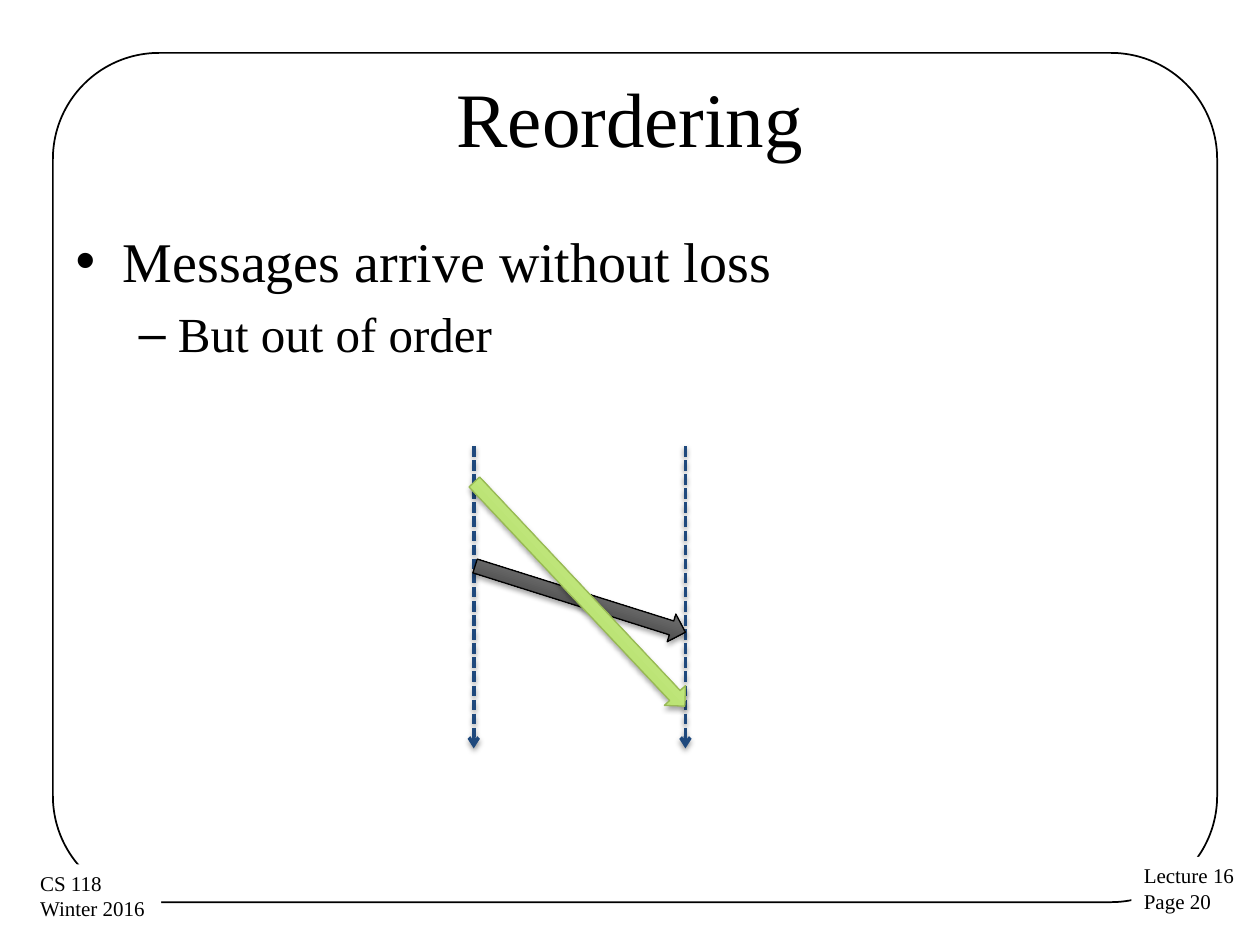
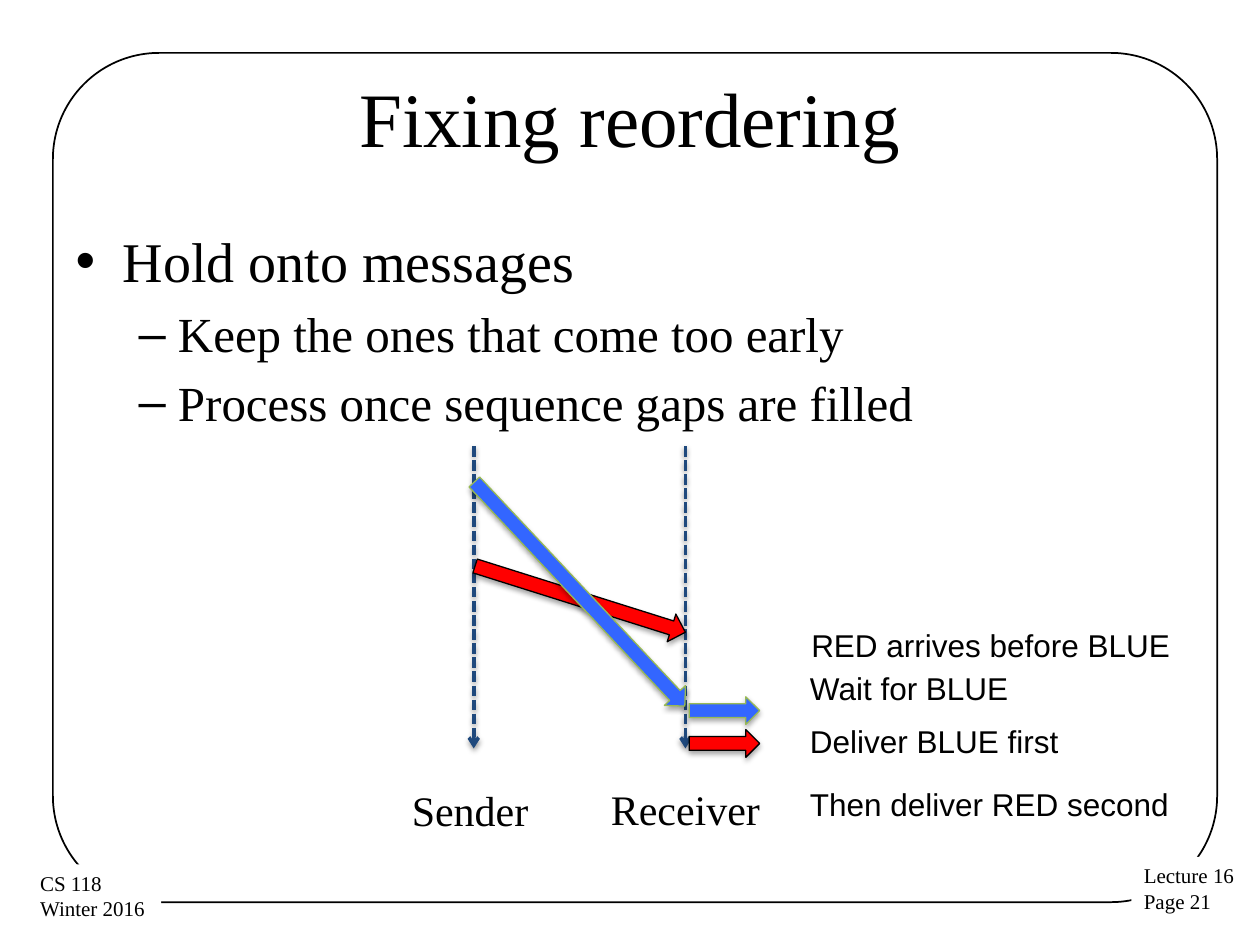
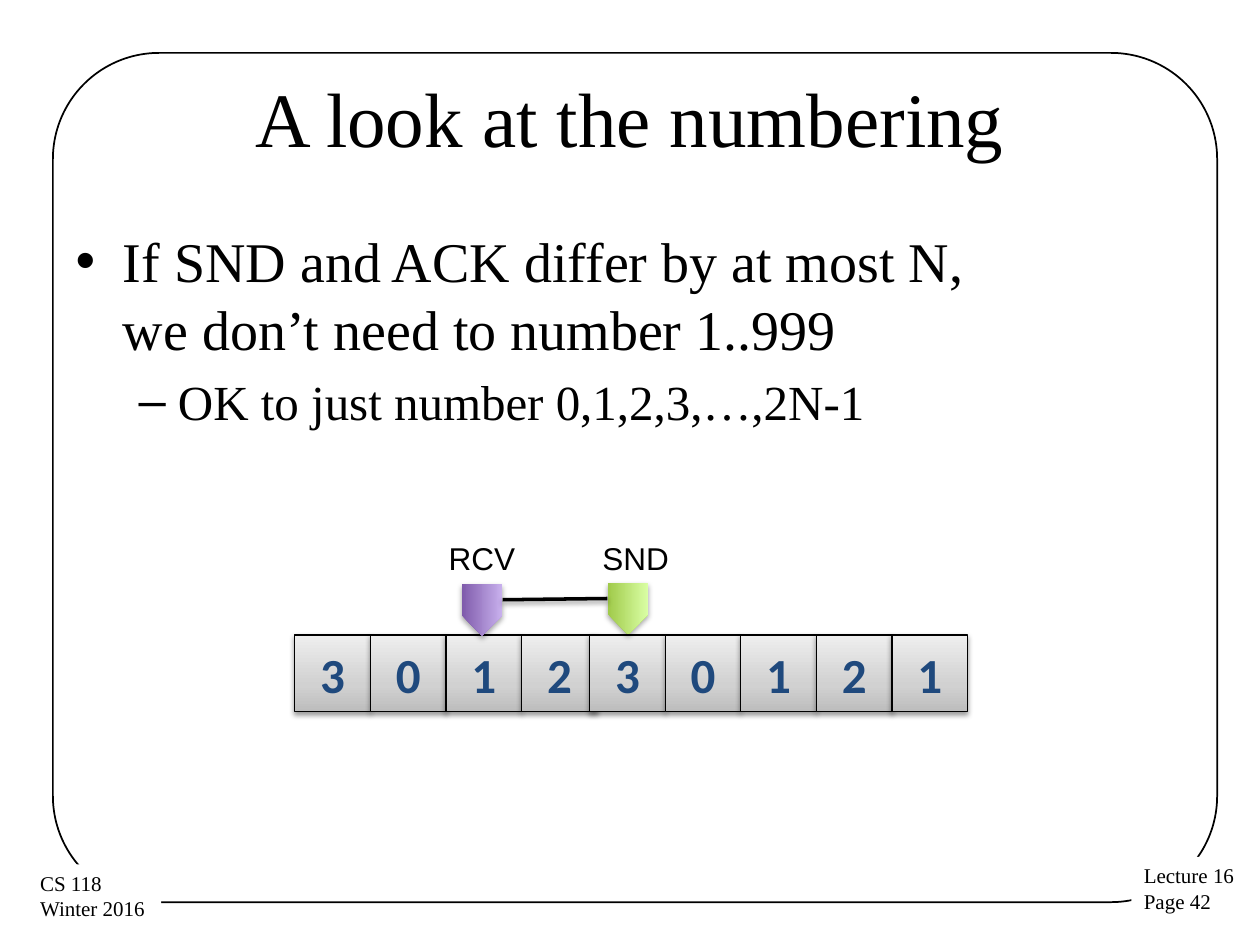
from lxml import etree
from pptx import Presentation
from pptx.dml.color import RGBColor
from pptx.enum.dml import MSO_LINE
from pptx.enum.shapes import MSO_CONNECTOR, MSO_SHAPE
from pptx.enum.text import MSO_ANCHOR, MSO_AUTO_SIZE, PP_ALIGN
from pptx.oxml import parse_xml
from pptx.oxml.ns import nsdecls, qn
from pptx.util import Inches, Pt

FRAME = MSO_SHAPE.ROUNDED_RECTANGLE
CELL = MSO_SHAPE.RECTANGLE
ARROW = MSO_SHAPE.RIGHT_ARROW
MARKER = MSO_SHAPE.PENTAGON
STRAIGHT = MSO_CONNECTOR.STRAIGHT
SYS_DASH = MSO_LINE.SQUARE_DOT
CENTER, LEFT = PP_ALIGN.CENTER, PP_ALIGN.LEFT
MIDDLE = MSO_ANCHOR.MIDDLE
FIT_SHAPE, NO_FIT = MSO_AUTO_SIZE.SHAPE_TO_FIT_TEXT, MSO_AUTO_SIZE.NONE

SERIF, SANS, CELL_FONT = "Times New Roman", "Arial", "Calibri"
BLACK, WHITE, NAVY = "000000", "FFFFFF", "1F497D"
RED, BLUE, GREEN_EDGE = "FF0000", "3366FF", "98B955"
DARK_BLEND = [(0, BLACK), (100, "BDBDBD")]
GREEN_BLEND = [(0, "A0CA4A"), (100, "DAFFA5")]
PURPLE_BLEND = [(0, "7F5BAB"), (100, "C8B0ED")]
GRAY_BLEND = [(0, "BDBDBD"), (35, "D1D1D1"), (100, "EEEEEE")]
LIST_SIZES = (32, 28)
STRONG_SHADOW, SOFT_SHADOW = (38, 1.6), (35, 1.8)
SENDER_X, RECEIVER_X = 3.76, 5.44


def rgb(color):
    """Turn a hex string into a colour."""
    return RGBColor.from_string(color)


def box(left, top, width, height):
    """Convert a place in inches to lengths."""
    return [Inches(value) for value in (left, top, width, height)]


class LectureDeck:
    """Hold the lecture style and the current slide."""

    def __init__(self):
        """Start an empty deck."""
        self.deck = Presentation()
        self.deck.slide_width, self.deck.slide_height = Inches(10), Inches(7.5)
        self.slide = None

    def start(self, title, points, page):
        """Add a slide with frame, footers, title and list."""
        self.slide = self.deck.slides.add_slide(self.deck.slide_layouts[1])
        self.shape(FRAME, (0.42, 0.42, 9.24, 6.74), edge=BLACK, weight=1).adjustments[0] = 0.125
        self.label((8.98, 6.8, 0.93, 0.51), ["Lecture 16", f"Page {page}"], 12, SERIF, fill=WHITE)
        self.label((0.22, 6.86, 1.06, 0.51), ["CS 118", "Winter 2016"], 12, SERIF, fill=WHITE)
        heading = self.slide.shapes.title
        self.place(heading, (0.5, 0.3, 9, 1.25))
        heading.text_frame.vertical_anchor = MIDDLE
        self.add_text(heading.text_frame.paragraphs[0], title, 44, SERIF, align=CENTER)
        body = self.slide.placeholders[1]
        self.place(body, (0.5, 1.75, 9, 4.95))
        body.text_frame.auto_size = NO_FIT
        for index, (level, text) in enumerate(points):
            paragraph = self.paragraph(body.text_frame, index)
            paragraph.level = level
            self.add_text(paragraph, text, LIST_SIZES[level], SERIF)

    def place(self, holder, place):
        """Move a placeholder."""
        holder.left, holder.top, holder.width, holder.height = box(*place)

    def paragraph(self, frame, index):
        """Return the first paragraph or add the next one."""
        return frame.add_paragraph() if index else frame.paragraphs[0]

    def add_text(self, paragraph, text, size, font, color=BLACK, bold=False, align=LEFT):
        """Add formatted runs, one for each line of the text."""
        paragraph.alignment = align
        for index, line in enumerate(text.split("\n")):
            if index:
                paragraph.add_line_break()
            run = paragraph.add_run()
            run.text = line
            run.font.size, run.font.name, run.font.bold = Pt(size), font, bold
            run.font.color.rgb = rgb(color)

    def label(self, place, lines, size, font, align=LEFT, fill=None):
        """Add a text box that does not wrap."""
        text_box = self.slide.shapes.add_textbox(*box(*place))
        if fill:
            text_box.fill.solid()
            text_box.fill.fore_color.rgb = rgb(fill)
        frame = text_box.text_frame
        frame.word_wrap, frame.auto_size = False, FIT_SHAPE
        for index, line in enumerate(lines):
            self.add_text(self.paragraph(frame, index), line, size, font, align=align)

    def shadow(self, item, strength):
        """Give an element a downward shadow."""
        alpha, distance = strength
        effects = etree.SubElement(item.element.spPr, qn("a:effectLst"))
        effects.append(parse_xml(
            f'<a:outerShdw {nsdecls("a")} blurRad="{Pt(3.1)}" dist="{Pt(distance)}" '
            f'dir="5400000" rotWithShape="0"><a:srgbClr val="{BLACK}">'
            f'<a:alpha val="{alpha * 1000}"/></a:srgbClr></a:outerShdw>'))

    def blend(self, shape, stops):
        """Fill a shape with a gradient that runs upwards."""
        properties = shape.element.spPr
        marks = "".join(f'<a:gs pos="{position * 1000}"><a:srgbClr val="{color}"/></a:gs>'
                        for position, color in stops)
        properties.replace(properties.find(qn("a:noFill")), parse_xml(
            f'<a:gradFill {nsdecls("a")} rotWithShape="1"><a:gsLst>{marks}</a:gsLst>'
            '<a:lin ang="16200000" scaled="0"/></a:gradFill>'))

    def shape(self, kind, place, fill=None, edge=None, weight=0.75, turn=0, shadow=None):
        """Add a preset shape with a plain or blended fill."""
        shape = self.slide.shapes.add_shape(kind, *box(*place))
        shape.rotation = turn
        if edge:
            shape.line.color.rgb = rgb(edge)
            shape.line.width = Pt(weight)
        else:
            shape.line.fill.background()
        if isinstance(fill, str):
            shape.fill.solid()
            shape.fill.fore_color.rgb = rgb(fill)
        else:
            shape.fill.background()
            if fill:
                self.blend(shape, fill)
        if shadow:
            self.shadow(shape, shadow)
        else:
            shape.shadow.inherit = False
        return shape

    def line(self, start, end, color, dashed_arrow=False):
        """Add a straight line, dashed with an arrowhead on request."""
        line = self.slide.shapes.add_connector(STRAIGHT, *box(*start, *end))
        line.line.color.rgb = rgb(color)
        line.line.width = Pt(2)
        if dashed_arrow:
            line.line.dash_style = SYS_DASH
            etree.SubElement(line.element.spPr.find(qn("a:ln")), qn("a:tailEnd"), type="arrow")
        self.shadow(line, STRONG_SHADOW)

    def message(self, place, fill, edge, turn=0):
        """Add a block arrow for a message."""
        self.shape(ARROW, place, fill, edge, turn=turn, shadow=SOFT_SHADOW)

    def crossing(self, late_fill, early_fill):
        """Draw two timelines and two messages that cross."""
        for x in (SENDER_X, RECEIVER_X):
            self.line((x, 3.54), (x, 5.94), NAVY, dashed_arrow=True)
        self.message((3.73, 4.64, 1.75, 0.23), late_fill, BLACK, 17.5)
        self.message((3.38, 4.6, 2.44, 0.23), early_fill, GREEN_EDGE, 46.8)

    def cells(self, left, digits):
        """Add a row of numbered cells."""
        for index, digit in enumerate(digits):
            cell = self.shape(CELL, (left + 0.6 * index, 5.04, 0.6, 0.61), GRAY_BLEND, BLACK,
                              shadow=STRONG_SHADOW)
            cell.text_frame.vertical_anchor = MIDDLE
            self.add_text(cell.text_frame.paragraphs[0], digit, 28, CELL_FONT, NAVY, True, CENTER)

    def pointer(self, left, top, fill):
        """Add a marker that points down at a cell."""
        self.shape(MARKER, (left, top, 0.41, 0.32), fill, turn=90, shadow=SOFT_SHADOW)


def main():
    """Build the three slides."""
    lecture = LectureDeck()

    lecture.start("Reordering", [(0, "Messages arrive without loss"), (1, "But out of order")], 20)
    lecture.crossing(DARK_BLEND, GREEN_BLEND)

    lecture.start("Fixing reordering", [
        (0, "Hold onto messages"),
        (1, "Keep the ones that come too early"),
        (1, "Process once sequence gaps are filled")], 21)
    lecture.crossing(RED, BLUE)
    lecture.message((5.47, 5.53, 0.56, 0.22), BLUE, GREEN_EDGE)
    lecture.message((5.47, 5.79, 0.56, 0.22), RED, BLACK)
    for left, top, width, step in [
            (6.34, 4.92, 3.08, "RED arrives before BLUE"),
            (6.33, 5.26, 1.79, "Wait for BLUE"),
            (6.33, 5.68, 2.19, "Deliver BLUE first"),
            (6.33, 6.18, 3.08, "Then deliver RED second")]:
        lecture.label((left, top, width, 0.4), [step], 18, SANS)
    lecture.label((3.17, 6.18, 1.14, 0.5), ["Sender"], 24, SERIF)
    lecture.label((4.75, 6.17, 1.4, 0.5), ["Receiver"], 24, SERIF)

    lecture.start("A look at the numbering", [
        (0, "If SND and ACK differ by at most N, \nwe don’t need to number 1..999"),
        (1, "OK to just number 0,1,2,3,…,2N-1")], 42)
    lecture.cells(2.34, "3012")
    lecture.cells(4.68, "30121")
    lecture.pointer(4.78, 4.67, GREEN_BLEND)
    lecture.pointer(3.62, 4.68, PURPLE_BLEND)
    lecture.label((4.68, 4.23, 0.73, 0.4), ["SND"], 18, SANS, CENTER)
    lecture.label((3.46, 4.23, 0.73, 0.4), ["RCV"], 18, SANS, CENTER)
    lecture.line((3.99, 4.76), (4.82, 4.75), BLACK)

    lecture.deck.save("out.pptx")


if __name__ == "__main__":
    main()
